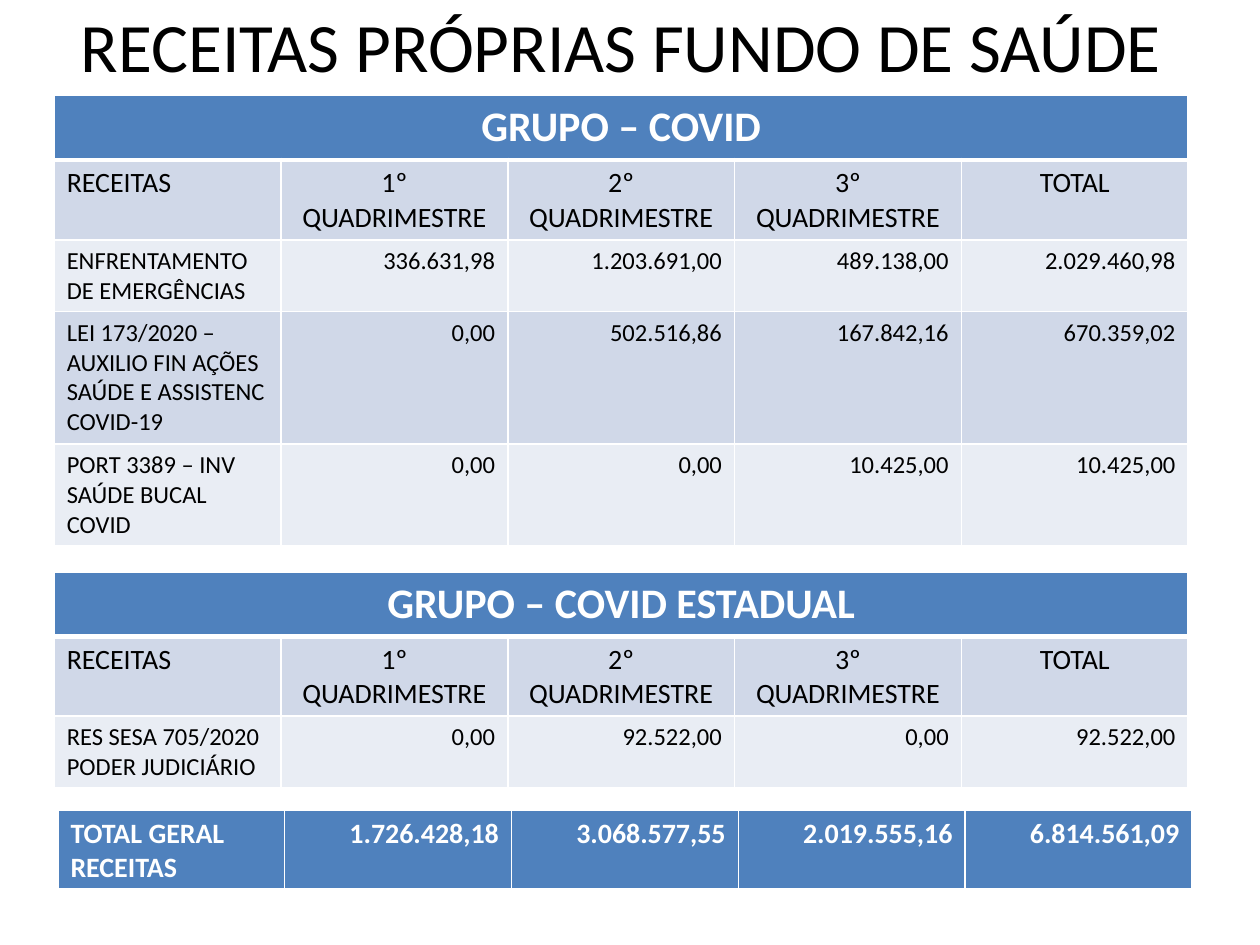
from lxml import etree
from pptx import Presentation
from pptx.dml.color import RGBColor
from pptx.enum.text import MSO_ANCHOR, PP_ALIGN
from pptx.oxml.ns import qn
from pptx.util import Inches, Pt

LEFT, CENTER, RIGHT = PP_ALIGN.LEFT, PP_ALIGN.CENTER, PP_ALIGN.RIGHT
MIDDLE = MSO_ANCHOR.MIDDLE

COLORS = {"accent": "4F81BD", "dark_band": "D0D8E8", "light_band": "E9EDF4",
          "white": "FFFFFF", "black": "000000"}
FONT = "Calibri"
COLUMNS, COLUMN_WIDTH = 5, 1.8
MARGIN = 0.43
BANNER_HEIGHT, HEADER_HEIGHT = 0.51, 0.63
THIN, THICK = 1, 3

HEADER = ["RECEITAS", "1º QUADRIMESTRE", "2º QUADRIMESTRE", "3º QUADRIMESTRE", "TOTAL"]
COVID_ROWS = [
    (0.57, ["ENFRENTAMENTO DE EMERGÊNCIAS",
            "336.631,98", "1.203.691,00", "489.138,00", "2.029.460,98"]),
    (1.05, ["LEI 173/2020 – AUXILIO FIN AÇÕES SAÚDE E ASSISTENC COVID-19",
            "0,00", "502.516,86", "167.842,16", "670.359,02"]),
    (0.81, ["PORT 3389 – INV SAÚDE BUCAL COVID",
            "0,00", "0,00", "10.425,00", "10.425,00"]),
]
STATE_ROWS = [
    (0.57, ["RES SESA 705/2020\nPODER JUDICIÁRIO",
            "0,00", "92.522,00", "0,00", "92.522,00"]),
]
GRAND_TOTAL = ["TOTAL GERAL RECEITAS",
               "1.726.428,18", "3.068.577,55", "2.019.555,16", "6.814.561,09"]


def rgb(name):
    return RGBColor.from_string(COLORS[name])


def write_text(frame, text, size=14, color="black", bold=False, align=LEFT):
    """Fill a text frame, one paragraph per line of text."""
    for index, line in enumerate(text.split("\n")):
        paragraph = frame.add_paragraph() if index else frame.paragraphs[0]
        paragraph.alignment = align
        run = paragraph.add_run()
        run.text = line
        run.font.name, run.font.size, run.font.bold = FONT, Pt(size), bold
        run.font.color.rgb = rgb(color)


def set_borders(cell, top=THIN, bottom=THIN):
    """Draw white borders; their elements must precede the cell fill."""
    properties = cell._tc.get_or_add_tcPr()
    widths = {"a:lnL": THIN, "a:lnR": THIN, "a:lnT": top, "a:lnB": bottom}
    for index, (tag, width) in enumerate(widths.items()):
        line = etree.Element(qn(tag), w=str(Pt(width)))
        fill = etree.SubElement(line, qn("a:solidFill"))
        etree.SubElement(fill, qn("a:srgbClr"), val=COLORS["white"])
        properties.insert(index, line)


class RevenueSlide:
    def __init__(self, presentation):
        self.slide = presentation.slides.add_slide(presentation.slide_layouts[6])

    def title(self, text, height):
        shape = self.slide.shapes.add_textbox(
            Inches(MARGIN), 0, Inches(COLUMNS * COLUMN_WIDTH), Inches(height))
        frame = shape.text_frame
        frame.word_wrap = True
        frame.vertical_anchor = MIDDLE
        write_text(frame, text, size=39.6, align=CENTER)

    def table(self, left, top, heights):
        shape = self.slide.shapes.add_table(
            len(heights), COLUMNS, Inches(left), Inches(top),
            Inches(COLUMNS * COLUMN_WIDTH), Inches(sum(heights)))
        table = shape.table
        table.first_row = table.horz_banding = False
        for row, height in zip(table.rows, heights):
            row.height = Inches(height)
        return table

    def fill_row(self, row, texts, fill, label_align=LEFT, value_align=RIGHT,
                 top=THIN, bottom=THIN, **text_format):
        for index, (cell, text) in enumerate(zip(row.cells, texts)):
            cell.fill.solid()
            cell.fill.fore_color.rgb = rgb(fill)
            set_borders(cell, top, bottom)
            if text:
                write_text(cell.text_frame, text,
                           align=value_align if index else label_align, **text_format)

    def group(self, top, name, data):
        heights = [BANNER_HEIGHT, HEADER_HEIGHT] + [height for height, _ in data]
        table = self.table(MARGIN, top, heights)
        banner, header, *body = table.rows
        table.cell(0, 0).merge(table.cell(0, COLUMNS - 1))
        self.fill_row(banner, [name] + [""] * (COLUMNS - 1), "accent", bottom=THICK,
                      label_align=CENTER, size=24, color="white", bold=True)
        self.fill_row(header, HEADER, "dark_band", top=THICK,
                      value_align=CENTER, size=16)
        for index, (row, (_, texts)) in enumerate(zip(body, data)):
            self.fill_row(row, texts, "dark_band" if index % 2 else "light_band")

    def grand_total(self, left, top, texts):
        table = self.table(left, top, [HEADER_HEIGHT])
        self.fill_row(table.rows[0], texts, "accent", bottom=THICK,
                      size=16, color="white", bold=True)


def main():
    presentation = Presentation()
    presentation.slide_width, presentation.slide_height = Inches(10), Inches(7.5)
    revenue = RevenueSlide(presentation)

    # Title
    revenue.title("RECEITAS PRÓPRIAS FUNDO DE SAÚDE", 0.71)
    # Revenue groups
    revenue.group(0.76, "GRUPO – COVID", COVID_ROWS)
    revenue.group(4.54, "GRUPO – COVID ESTADUAL", STATE_ROWS)
    # Grand total
    revenue.grand_total(0.46, 6.43, GRAND_TOTAL)

    presentation.save("out.pptx")


if __name__ == "__main__":
    main()
